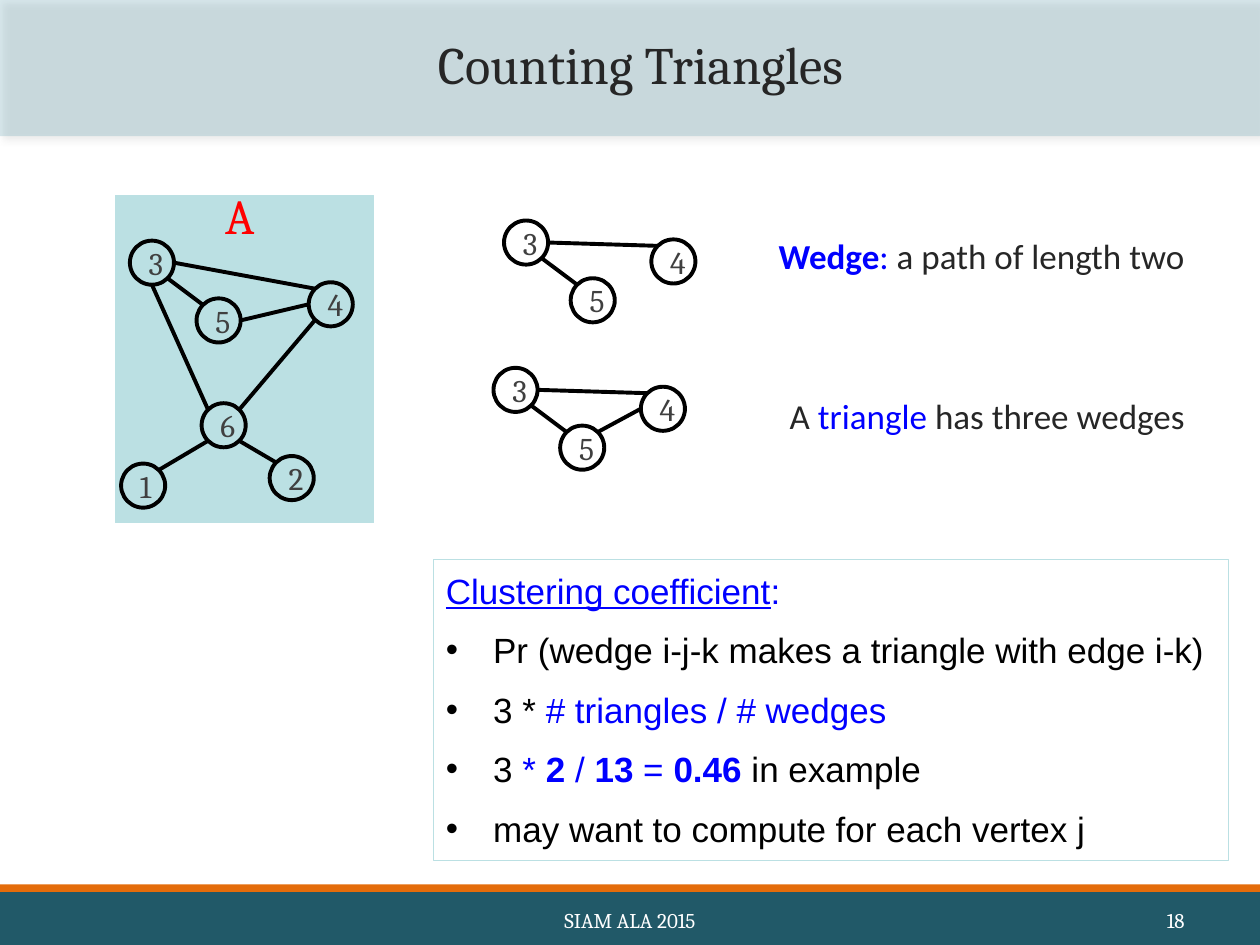
from lxml.etree import SubElement
from pptx import Presentation
from pptx.dml.color import RGBColor
from pptx.enum.shapes import MSO_CONNECTOR, MSO_SHAPE
from pptx.enum.text import MSO_ANCHOR, PP_ALIGN
from pptx.oxml.ns import qn
from pptx.util import Pt

COLORS = {
    "header": "31859C", "footer": "215968", "accent": "E46C0A",
    "panel": "BBE0E3", "black": "000000", "white": "FFFFFF",
    "title": "262626", "digit": "404040", "blue": "0000FF", "red": "FF0000",
}
NODE_SIZE = 25.2
RADIUS = NODE_SIZE / 2
DIAGONAL = RADIUS * 0.5 ** 0.5
SITES = {
    "E": (RADIUS, 0), "W": (-RADIUS, 0), "S": (0, RADIUS),
    "NE": (DIAGONAL, -DIAGONAL), "NW": (-DIAGONAL, -DIAGONAL),
    "SE": (DIAGONAL, DIAGONAL), "SW": (-DIAGONAL, DIAGONAL),
}


class SlideBuilder:
    def __init__(self, slide):
        self.slide = slide
        self.shapes = slide.shapes

    def open_group(self):
        self.shapes = self.slide.shapes.add_group_shape().shapes

    def close_group(self):
        self.shapes = self.slide.shapes

    def color(self, name):
        return RGBColor.from_string(COLORS[name])

    def shape(self, kind, box, fill=None, line=None, weight=0.75):
        shape = self.shapes.add_shape(kind, *map(Pt, box))
        shape.shadow.inherit = False
        if fill:
            shape.fill.solid()
            shape.fill.fore_color.rgb = self.color(fill)
        else:
            shape.fill.background()
        if line:
            shape.line.color.rgb = self.color(line)
            shape.line.width = Pt(weight)
        else:
            shape.line.fill.background()
        return shape

    def rect(self, box, fill=None, line=None):
        return self.shape(MSO_SHAPE.RECTANGLE, box, fill, line)

    def header(self, box):
        band = self.rect(box, "header")
        properties = band._element.spPr
        tint = properties.find(qn("a:solidFill"))[0]
        SubElement(tint, qn("a:alpha"), val="19000")
        effects = properties.find(qn("a:effectLst"))
        shadow = SubElement(effects, qn("a:outerShdw"), blurRad=str(Pt(4)),
                            dist=str(Pt(3)), dir=str(45 * 60000), rotWithShape="0")
        shade = SubElement(shadow, qn("a:srgbClr"), val=COLORS["black"])
        SubElement(shade, qn("a:alpha"), val="40000")

    def format_run(self, run, font, size, color, bold=False, underline=False):
        run.font.name = font
        run.font.size = Pt(size)
        run.font.color.rgb = self.color(color)
        run.font.bold = bold
        run.font.underline = underline

    def runs(self, paragraph, parts, font, size):
        for text, color, *styles in parts:
            run = paragraph.add_run()
            run.text = text
            self.format_run(run, font, size, color, "bold" in styles, "underline" in styles)

    def text(self, box, parts, font, size, align=PP_ALIGN.LEFT,
             anchor=MSO_ANCHOR.TOP, wrap=True):
        frame = self.shapes.add_textbox(*map(Pt, box)).text_frame
        frame.word_wrap = wrap
        frame.vertical_anchor = anchor
        frame.paragraphs[0].alignment = align
        self.runs(frame.paragraphs[0], parts, font, size)

    def bullets(self, box, heading, items):
        panel = self.rect(box, line="panel")
        frame = panel.text_frame
        frame.word_wrap = True
        frame.vertical_anchor = MSO_ANCHOR.TOP
        frame.margin_top = Pt(5.6)
        frame.paragraphs[0].alignment = PP_ALIGN.LEFT
        self.runs(frame.paragraphs[0], heading, "Arial", 20)
        for parts in items:
            paragraph = frame.add_paragraph()
            paragraph.alignment = PP_ALIGN.LEFT
            paragraph.space_before = Pt(10)
            properties = paragraph._p.get_or_add_pPr()
            properties.set("marL", str(Pt(27)))
            properties.set("indent", str(-Pt(27)))
            SubElement(properties, qn("a:buFont"), typeface="Arial")
            SubElement(properties, qn("a:buChar"), char="•")
            self.runs(paragraph, parts, "Arial", 20)

    def node(self, label, left, top):
        circle = self.shape(MSO_SHAPE.OVAL, (left, top, NODE_SIZE, NODE_SIZE),
                            line="black", weight=2.25)
        frame = circle.text_frame
        frame.text = label
        frame.word_wrap = True
        frame.vertical_anchor = MSO_ANCHOR.MIDDLE
        frame.paragraphs[0].alignment = PP_ALIGN.CENTER
        self.format_run(frame.paragraphs[0].runs[0], "Cambria", 18, "digit")

    def edge(self, start, end):
        line = self.shapes.add_connector(MSO_CONNECTOR.STRAIGHT, *map(Pt, start + end))
        line.line.color.rgb = self.color("black")
        line.line.width = Pt(2.25)
        SubElement(line._element.spPr, qn("a:effectLst"))

    def graph(self, origin, nodes, edges):
        places = {label: (origin[0] + x, origin[1] + y) for label, (x, y) in nodes.items()}
        for label, place in places.items():
            self.node(label, *place)

        def site(name):
            x, y = places[name[0]]
            dx, dy = SITES[name[1:]]
            return x + RADIUS + dx, y + RADIUS + dy

        for edge in edges:
            start, end = edge.split("-")
            self.edge(site(start), site(end))


def main():
    presentation = Presentation()
    presentation.slide_width = Pt(720)
    presentation.slide_height = Pt(540)
    builder = SlideBuilder(presentation.slides.add_slide(presentation.slide_layouts[6]))
    middle = MSO_ANCHOR.MIDDLE

    builder.header((0, 0, 720, 77.8))
    builder.rect((0, 506, 720, 34), "footer")
    builder.rect((0, 505.4, 720, 4.3), "accent")
    builder.text((246, 511.2, 228, 28.8), [("SIAM ALA 2015", "white")], "Cambria", 12,
                 PP_ALIGN.CENTER, middle)
    builder.text((516, 511.2, 168, 28.8), [("18", "white")], "Cambria", 12,
                 PP_ALIGN.RIGHT, middle)
    builder.text((54, 9.4, 624, 54), [("Counting Triangles", "title")], "Cambria", 30,
                 PP_ALIGN.CENTER, middle)

    wedge_nodes = {"5": (38.1, 33), "3": (0, 0), "4": (84.2, 10.8)}
    wedge_edges = ["4NW-3E", "3SE-5NW"]
    triangle_edges = wedge_edges + ["4W-5NE"]
    full_nodes = wedge_nodes | {"4": (102.2, 23.8), "6": (41, 92.9),
                                "1": (-5, 127.4), "2": (79.9, 123.1)}
    full_edges = wedge_edges + ["4W-5E", "3S-6NW", "4SW-6NE", "6SW-1NE", "6SE-2NW"]

    builder.open_group()
    builder.rect((66, 111.6, 147.6, 187.2), "panel", "panel")
    builder.text((121.6, 102.4, 35.2, 41), [("A", "red")], "Cambria", 28, wrap=False)
    builder.graph((74.2, 137.5), full_nodes, full_edges)
    builder.close_group()

    builder.bullets(
        (247.7, 319.7, 454.3, 172),
        [("Clustering coefficient", "blue", "underline"), (":", "blue")],
        [
            [("Pr (wedge i-j-k makes a triangle with edge i-k)", "black")],
            [("3 * ", "black"), ("# triangles / # wedges", "blue")],
            [("3 ", "black"), ("* ", "blue"), ("2", "blue", "bold"), (" / ", "blue"),
             ("13", "blue", "bold"), (" = ", "blue"), ("0.46 ", "blue", "bold"),
             ("in example", "black")],
            [("may want to compute for each vertex j", "black")],
        ],
    )
    builder.text((437.8, 130.3, 249.1, 31.7),
                 [("Wedge", "blue", "bold"), (": ", "blue"),
                  ("a path of length two", "title")], "Calibri", 20, wrap=False)
    builder.text((444.2, 221.8, 242.6, 31.7),
                 [("A ", "title"), ("triangle", "blue"),
                  (" has three wedges", "title")], "Calibri", 20, wrap=False)

    for origin, edges in (((288, 126), wedge_edges), ((282, 210.2), triangle_edges)):
        builder.open_group()
        builder.graph(origin, wedge_nodes, edges)
        builder.close_group()

    presentation.save("out.pptx")


if __name__ == "__main__":
    main()
